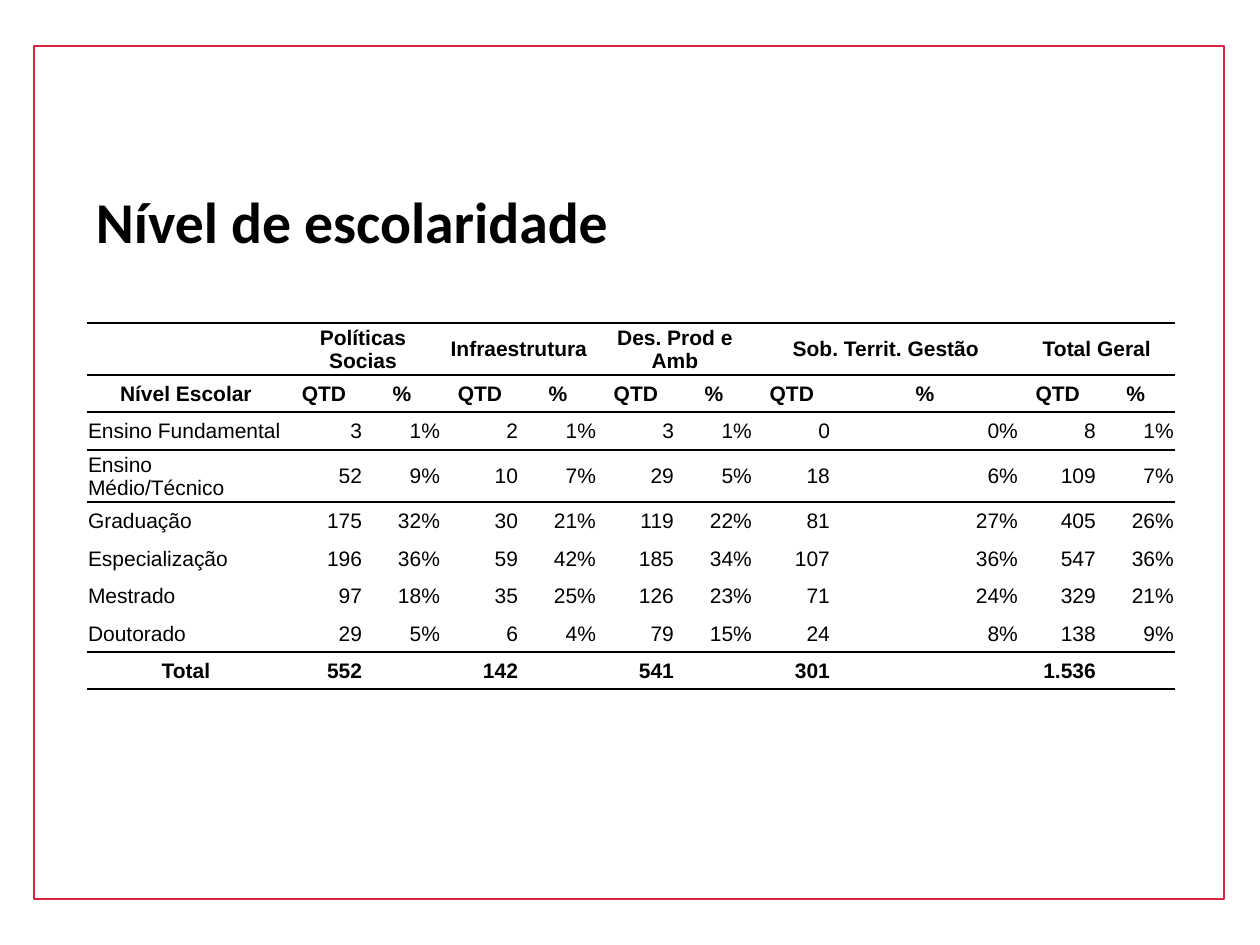
from dataclasses import dataclass

from lxml import etree
from pptx import Presentation
from pptx import util as u
from pptx.dml.color import RGBColor
from pptx.enum import shapes, text
from pptx.oxml.ns import qn

SCALE = 914400 / 126  # EMU in one px
BLACK = RGBColor(0x00, 0x00, 0x00)
RED = RGBColor(0xD9, 0x25, 0x43)
PLAIN = "{2D5ABB26-0587-4C30-8999-92F81FD0307C}"  # table style without grid

LEFT, MID, RIGHT = text.PP_ALIGN.LEFT, text.PP_ALIGN.CENTER, text.PP_ALIGN.RIGHT


@dataclass
class Area:
    name: str
    counts: list[int]
    shares: list[int]
    total: str
    wide: int = 78  # width of the % column


LEVELS = ["Ensino Fundamental", "Ensino Médio/Técnico", "Graduação",
          "Especialização", "Mestrado", "Doutorado"]
AREAS = [
    Area("Políticas Socias", [3, 52, 175, 196, 97, 29], [1, 9, 32, 36, 18, 5], "552"),
    Area("Infraestrutura", [2, 10, 30, 59, 35, 6], [1, 7, 21, 42, 25, 4], "142"),
    Area("Des. Prod e Amb", [3, 29, 119, 185, 126, 79], [1, 5, 22, 34, 23, 15], "541"),
    Area("Sob. Territ. Gestão", [0, 18, 81, 107, 71, 24], [0, 6, 27, 36, 24, 8], "301", 188),
    Area("Total Geral", [8, 109, 405, 547, 329, 138], [1, 7, 26, 36, 21, 9], "1.536"),
]
HEIGHTS = [52, 37, 38, 52, 38, 37, 38, 37, 37]
TOPS = {0, 1, 2, 3, 8}  # rows ruled above
ENDS = {0, 1, 2, 7, 8}  # rows ruled below


def px(n: int) -> u.Emu:
    return u.Emu(round(n * SCALE))


def style(item, **values) -> None:
    for name, value in values.items():
        setattr(item, name, value)


def rule(cell, side: str) -> None:
    """Add a black 1 pt border; sides go in front of the cell fill."""
    props = cell._tc.get_or_add_tcPr()
    line = etree.Element(qn(f"a:{side}"), w=str(u.Pt(1)))
    fill = etree.SubElement(line, qn("a:solidFill"))
    etree.SubElement(fill, qn("a:srgbClr"), val=str(BLACK))
    props.insert(len(props) - 1, line)


def write(cell, words: str, align, bold: bool) -> None:
    style(cell, margin_left=px(1), margin_right=px(1), margin_top=px(1),
          margin_bottom=0, vertical_anchor=text.MSO_ANCHOR.MIDDLE)
    cell.fill.background()
    para = cell.text_frame.paragraphs[0]
    para.alignment = align
    if words:
        run = para.add_run()
        run.text = words
        style(run.font, name="Arial", size=u.Pt(12), bold=bold)
        run.font.color.rgb = BLACK
    else:
        # Keeps an empty cell from stretching its row
        etree.SubElement(para._p, qn("a:endParaRPr"), sz="1200")


def lines() -> list[list[str]]:
    """Text of the whole grid, row by row."""
    heads, names, total = [""], ["Nível Escolar"], ["Total"]
    for area in AREAS:
        heads += [area.name, ""]
        names += ["QTD", "%"]
        total += [area.total, ""]
    body = []
    for i, level in enumerate(LEVELS):
        row = [level]
        for area in AREAS:
            row += [str(area.counts[i]), f"{area.shares[i]}%"]
        body.append(row)
    return [heads, names, *body, total]


def add_grid(slide) -> None:
    data = lines()
    widths = [198] + [w for area in AREAS for w in (78, area.wide)]
    frame = slide.shapes.add_table(len(data), len(widths), px(87), px(323),
                                   px(sum(widths)), px(sum(HEIGHTS)))
    table = frame.table
    style(table, first_row=False, horz_banding=False)
    table._tbl.tblPr.find(qn("a:tableStyleId")).text = PLAIN
    for col, wide in zip(table.columns, widths):
        col.width = px(wide)
    for row, high in zip(table.rows, HEIGHTS):
        row.height = px(high)

    last = len(data) - 1
    for r, row in enumerate(data):
        for c, words in enumerate(row):
            cell = table.cell(r, c)
            if r < 2 or (r == last and c == 0):
                align = MID
            else:
                align = RIGHT if c else LEFT
            write(cell, words, align, r in (0, 1, last))
            if r in TOPS:
                rule(cell, "lnT")
            if r in ENDS:
                rule(cell, "lnB")
    # Each area name spans its two columns
    for c in range(1, len(widths), 2):
        table.cell(0, c).merge(table.cell(0, c + 1))


def add_frame(slide) -> None:
    box = slide.shapes.add_shape(shapes.MSO_SHAPE.RECTANGLE,
                                 px(34), px(46), px(1190), px(853))
    box.shadow.inherit = False
    box.fill.background()
    box.line.color.rgb = RED
    box.line.width = u.Pt(1)
    slide.shapes._spTree.insert(2, box._element)  # behind the title


def set_title(slide) -> None:
    title = slide.shapes.title
    style(title, left=px(87), top=px(156), width=px(1086), height=px(137))
    body = title.text_frame
    style(body, margin_left=px(9), margin_right=px(9), margin_top=px(9),
          margin_bottom=px(9), word_wrap=True, auto_size=text.MSO_AUTO_SIZE.NONE,
          vertical_anchor=text.MSO_ANCHOR.MIDDLE)
    para = body.paragraphs[0]
    style(para, alignment=LEFT, line_spacing=0.9)
    run = para.add_run()
    run.text = "Nível de escolaridade"
    style(run.font, name="Calibri", size=u.Pt(33), bold=True)
    run.font.color.rgb = BLACK


def main() -> None:
    deck = Presentation()
    style(deck, slide_width=px(1260), slide_height=px(945))
    slide = deck.slides.add_slide(deck.slide_layouts[5])
    set_title(slide)
    add_frame(slide)
    add_grid(slide)
    deck.save("out.pptx")


if __name__ == "__main__":
    main()
